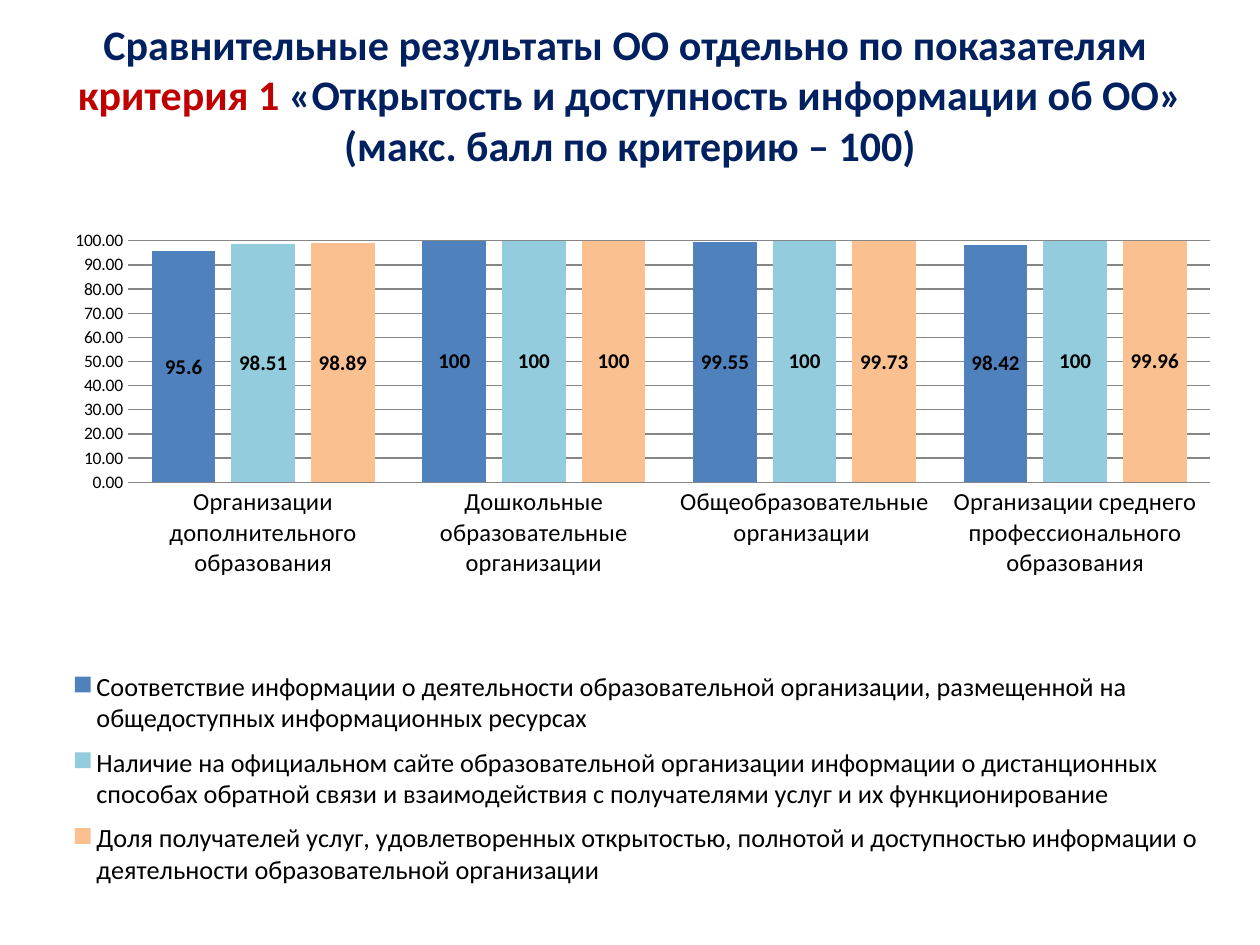
from lxml.etree import SubElement
from pptx import Presentation
from pptx.chart.data import CategoryChartData
from pptx.dml.color import RGBColor
from pptx.enum.chart import XL_CHART_TYPE as ChartType
from pptx.enum.chart import XL_LABEL_POSITION as LabelPosition
from pptx.enum.chart import XL_LEGEND_POSITION as LegendPosition
from pptx.enum.chart import XL_TICK_MARK as TickMark
from pptx.enum.text import MSO_ANCHOR as Anchor
from pptx.enum.text import PP_ALIGN as Align
from pptx.oxml.ns import qn
from pptx.util import Pt

EMU_PER_PX = 914400 / 126
FONT = "Calibri"
NAVY = RGBColor(0x00, 0x20, 0x60)
RED = RGBColor(0xC0, 0x00, 0x00)
BLACK = RGBColor(0x00, 0x00, 0x00)
GRAY = RGBColor(0x86, 0x86, 0x86)
BLUE = RGBColor(0x4F, 0x81, 0xBD)
AQUA = RGBColor(0x93, 0xCD, 0xDD)
PEACH = RGBColor(0xFA, 0xC0, 0x90)

TITLE_LINES = [
    [("Сравнительные результаты ОО отдельно по показателям ", NAVY)],
    [("критерия 1", RED), (" «Открытость и доступность информации об ОО»", NAVY)],
    [(" (макс. балл по критерию – 100) ", NAVY)],
]
ORGANIZATIONS = [
    "Организации дополнительного образования",
    "Дошкольные образовательные организации",
    "Общеобразовательные организации ",
    "Организации среднего профессионального образования",
]
INDICATORS = [
    ("Соответствие информации о деятельности образовательной организации, "
     "размещенной на общедоступных информационных ресурсах",
     (95.6, 100, 99.55, 98.42), BLUE),
    ("Наличие на официальном сайте образовательной организации информации о "
     "дистанционных способах обратной связи и взаимодействия с получателями "
     "услуг и их функционирование",
     (98.51, 100, 100, 100), AQUA),
    ("Доля получателей услуг, удовлетворенных открытостью, полнотой и "
     "доступностью информации о деятельности образовательной организации",
     (98.89, 100, 99.73, 99.96), PEACH),
]


def px(length):
    """Turn pixels into EMU."""
    return round(length * EMU_PER_PX)


def style_font(font, size, color=BLACK, bold=False):
    """Set typeface, size, colour and weight of a font."""
    font.name, font.size, font.bold = FONT, Pt(size), bold
    font.color.rgb = color


def set_layout(parent, index, fractions, inner=False):
    """Place a chart part by fractions of the chart area."""
    for old in parent.findall(qn("c:layout")):
        parent.remove(old)
    layout = SubElement(parent, qn("c:layout"))
    manual = SubElement(layout, qn("c:manualLayout"))
    settings = [("layoutTarget", "inner")] if inner else []
    settings += [("xMode", "edge"), ("yMode", "edge")]
    settings += zip("xywh", fractions)
    for tag, value in settings:
        SubElement(manual, qn(f"c:{tag}")).set("val", str(value))
    parent.insert(index, layout)


def add_title(slide, left, top, width, height):
    """Write the centred three-line heading."""
    frame = slide.shapes.add_textbox(px(left), px(top), px(width), px(height)).text_frame
    frame.word_wrap = True
    frame.vertical_anchor = Anchor.MIDDLE
    frame.margin_bottom = px(32)
    heading = frame.paragraphs[0]
    heading.alignment = Align.CENTER
    for number, line in enumerate(TITLE_LINES):
        if number:
            heading.add_line_break()
        for text, color in line:
            run = heading.add_run()
            run.text = text
            style_font(run.font, 24, color, True)


def style_axes(chart):
    """Format the category and value axes."""
    organizations, scores = chart.category_axis, chart.value_axis
    for axis, size in ((organizations, 14), (scores, 10)):
        axis.major_tick_mark = axis.minor_tick_mark = TickMark.NONE
        style_font(axis.tick_labels.font, size)
    organizations.format.line.color.rgb = GRAY
    scores.minimum_scale, scores.maximum_scale, scores.major_unit = 0, 100, 10
    scores.format.line.fill.background()
    scores.major_gridlines.format.line.color.rgb = GRAY
    scores.tick_labels.number_format = "0.00"
    scores.tick_labels.number_format_is_linked = False


def add_results_chart(slide, left, top, width, height):
    """Draw the clustered columns with their legend below."""
    results = CategoryChartData()
    results.categories = ORGANIZATIONS
    for name, scores, _ in INDICATORS:
        results.add_series(name, scores)
    chart = slide.shapes.add_chart(
        ChartType.COLUMN_CLUSTERED, px(left), px(top), px(width), px(height), results
    ).chart
    chart.has_title = False
    style_font(chart.font, 10)
    style_axes(chart)

    columns = chart.plots[0]
    columns.gap_width, columns.overlap = 75, -25
    columns.vary_by_categories = False
    for series, (_, _, color) in zip(columns.series, INDICATORS):
        series.format.fill.solid()
        series.format.fill.fore_color.rgb = color
        labels = series.data_labels
        labels.show_value = True
        labels.position = LabelPosition.CENTER
        style_font(labels.font, 12, bold=True)

    chart.has_legend = True
    legend = chart.legend
    legend.position = LegendPosition.BOTTOM
    legend.include_in_layout = False
    style_font(legend.font, 15)
    plot_area = chart.element.find(".//" + qn("c:plotArea"))
    set_layout(plot_area, 0, (0.085, 0.038, 0.894, 0.342), inner=True)
    set_layout(chart.element.find(".//" + qn("c:legend")), 1, (0.03, 0.63, 0.95, 0.34))


def main():
    """Build and save the slide."""
    deck = Presentation()
    deck.slide_width, deck.slide_height = px(1260), px(945)
    slide = deck.slides.add_slide(deck.slide_layouts[6])
    add_title(slide, 0, 0, 1260, 214)
    add_results_chart(slide, 25, 214, 1211, 706)
    deck.save("out.pptx")


if __name__ == "__main__":
    main()
